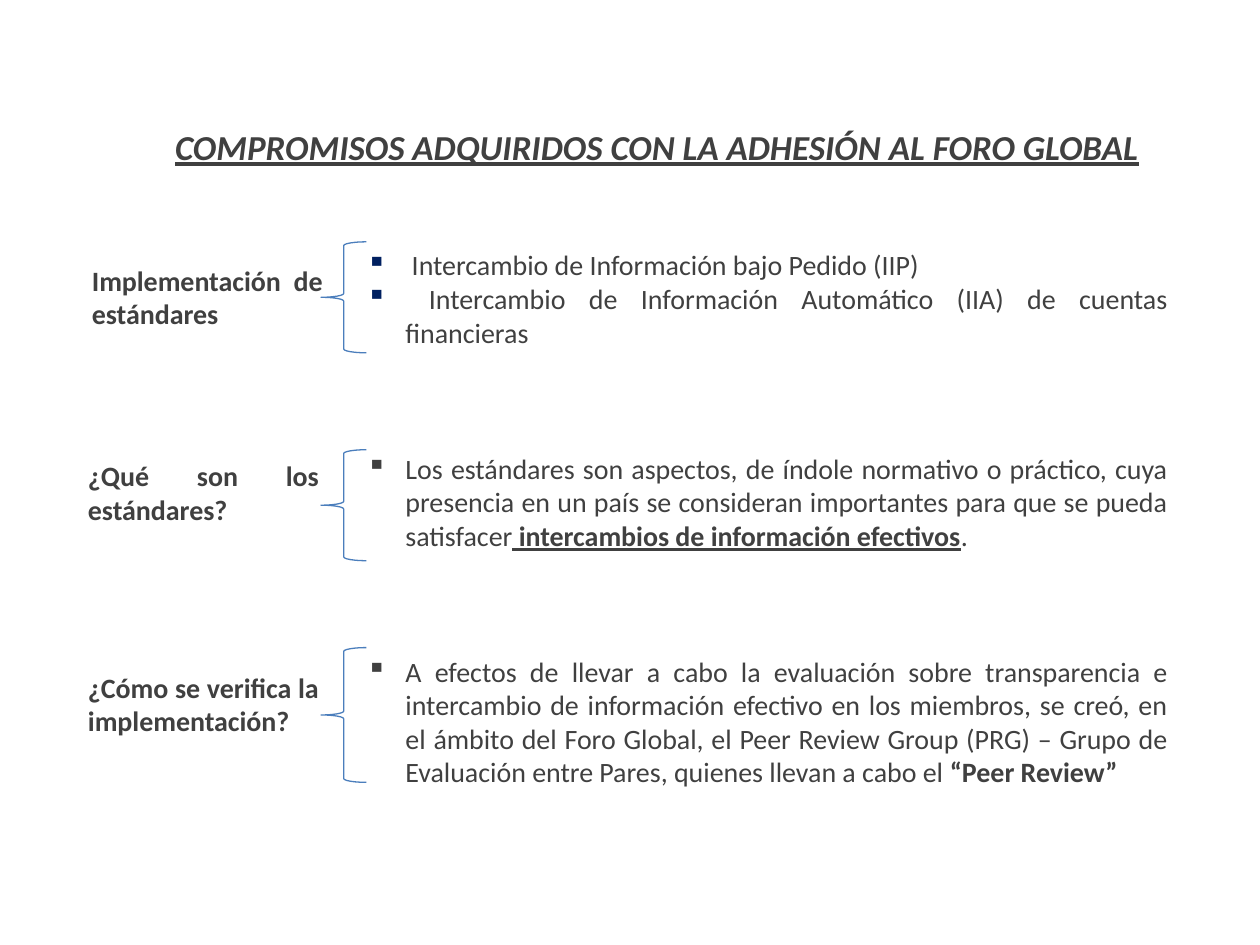
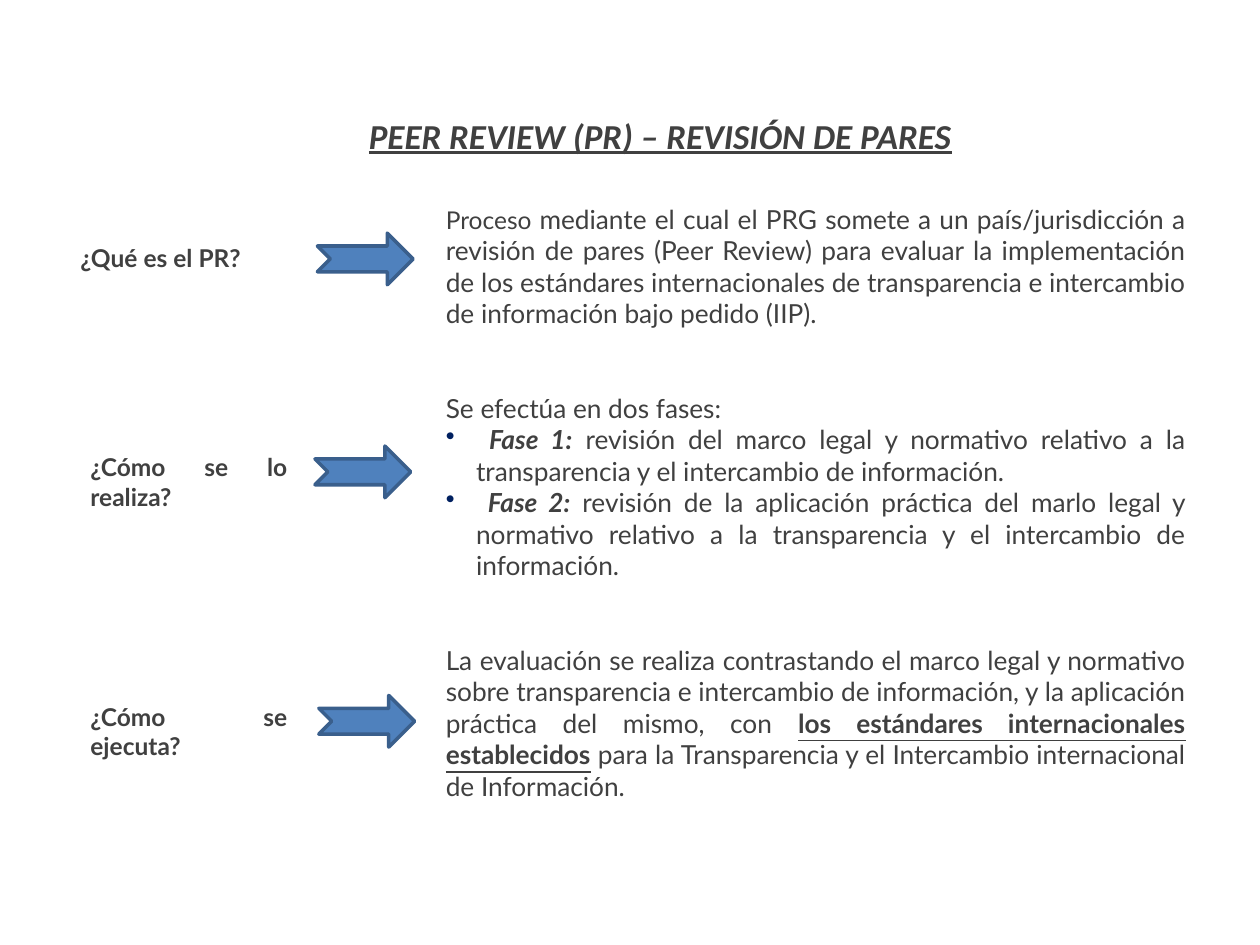
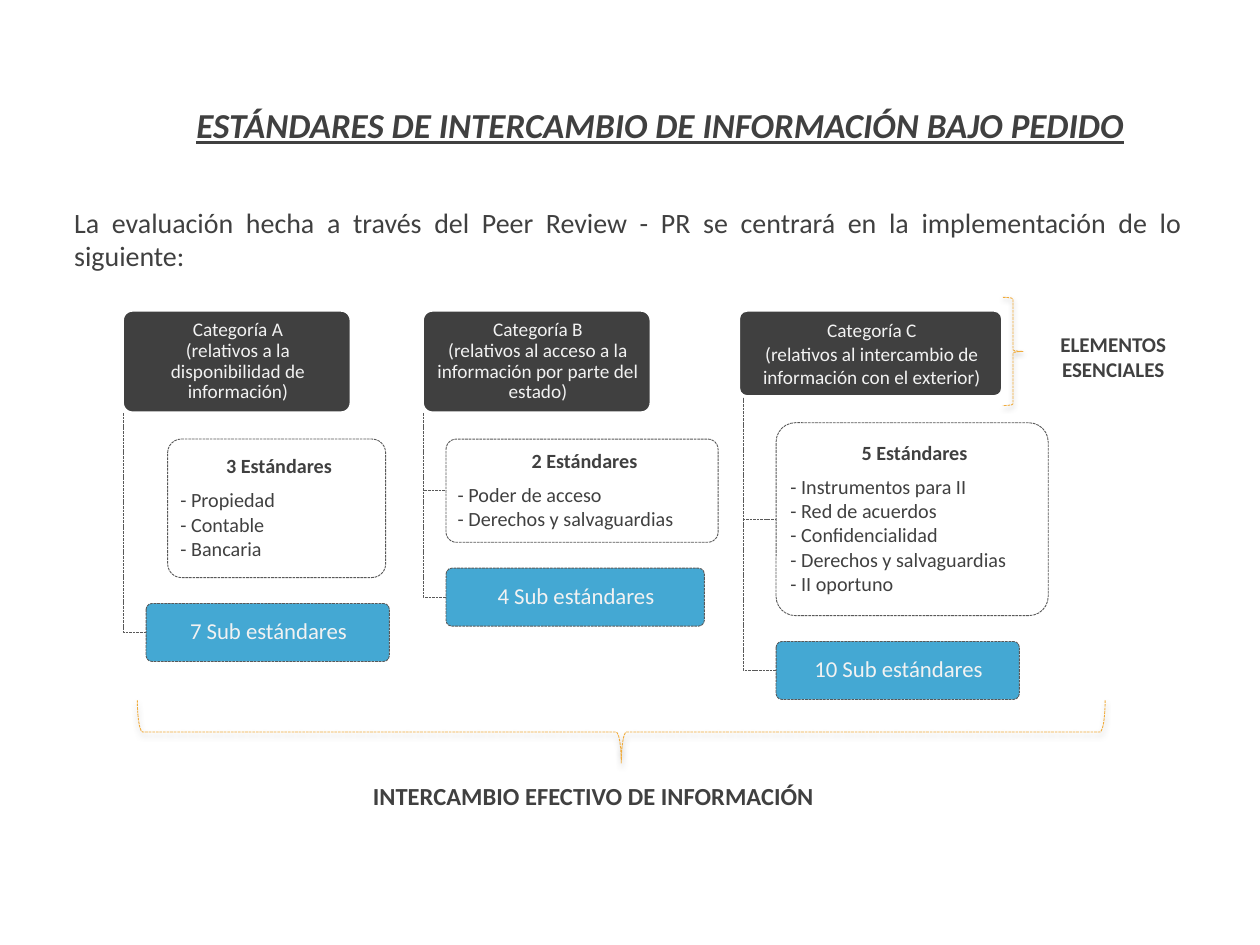
from lxml import etree
from pptx import Presentation
from pptx.dml.color import RGBColor
from pptx.enum import dml, shapes, text
from pptx.oxml import ns
from pptx.util import Pt

DARK = RGBColor(0x40, 0x40, 0x40)
NAVY = RGBColor(0x00, 0x20, 0x60)
BRACE_BLUE = RGBColor(0x4B, 0x7E, 0xBC)
ARROW_BLUE = RGBColor(0x4F, 0x81, 0xBD)
ARROW_EDGE = RGBColor(0x3A, 0x5F, 0x8C)
SKY = RGBColor(0x30, 0x9F, 0xCF)
ORANGE = RGBColor(0xF0, 0xAB, 0x3B)
GREY = RGBColor(0x59, 0x59, 0x59)
PALE = RGBColor(0xF2, 0xF2, 0xF2)
WHITE = RGBColor(0xFF, 0xFF, 0xFF)

LEFT, CENTER, JUSTIFY = text.PP_ALIGN.LEFT, text.PP_ALIGN.CENTER, text.PP_ALIGN.JUSTIFY
TOP, MIDDLE = text.MSO_ANCHOR.TOP, text.MSO_ANCHOR.MIDDLE
SHAPE = shapes.MSO_SHAPE
BOLD = {"bold": True}
KEY = {"bold": True, "underline": True}
PHASE = {"bold": True, "italic": True}
TITLE = {"size": Pt(20), "bold": True, "italic": True, "underline": True}


def write(sp, paras, fmt, insets=(7.2, 3.6, 7.2, 3.6), anchor=TOP):
    """Fill a shape with paragraphs given as (runs, paragraph format); a run is (text, font format)."""
    tf = sp.text_frame
    tf.word_wrap, tf.auto_size, tf.vertical_anchor = True, text.MSO_AUTO_SIZE.NONE, anchor
    for side, inset in zip(("left", "top", "right", "bottom"), insets):
        setattr(tf, f"margin_{side}", Pt(inset))
    for i, (runs, layout) in enumerate(paras):
        p = tf.paragraphs[0] if i == 0 else tf.add_paragraph()
        pPr = p._p.get_or_add_pPr()
        for name, value in layout.items():
            if name == "bullet":
                char, color, hang = value
                pPr.set("marL", str(Pt(hang)))
                pPr.set("indent", str(-Pt(hang)))
                clr = etree.SubElement(pPr, ns.qn("a:buClr"))
                etree.SubElement(clr, ns.qn("a:srgbClr"), val=str(color))
                etree.SubElement(pPr, ns.qn("a:buChar"), char=char)
            elif name == "indent":
                pPr.set("marL", "0")
                pPr.set("indent", str(Pt(value)))
            else:
                setattr(p, name, value)
        for words, own in runs:
            r = p.add_run()
            r.text = words
            for name, value in {"name": "Calibri", "color": DARK, **fmt, **own}.items():
                if name == "color":
                    r.font.color.rgb = value
                else:
                    setattr(r.font, name, value)


def style(sp, line, width, fill=None, dashed=False, opacity=100):
    sp.shadow.inherit = False
    sp.line.color.rgb, sp.line.width = line, Pt(width)
    if dashed:
        sp.line.dash_style = dml.MSO_LINE.SQUARE_DOT
    if fill is None:
        sp.fill.background()
        return
    sp.fill.solid()
    sp.fill.fore_color.rgb = fill
    if opacity < 100:
        clr = sp._element.spPr.find(ns.qn("a:solidFill"))[0]
        etree.SubElement(clr, ns.qn("a:alpha"), val=str(opacity * 1000))


prs = Presentation()
prs.slide_width, prs.slide_height = Pt(720), Pt(540)

# Titles
slides = []
for title, top, layout in [
    ("COMPROMISOS ADQUIRIDOS CON LA ADHESIÓN AL FORO GLOBAL", 64, {"alignment": LEFT, "line_spacing": 1.5}),
    ("PEER REVIEW (PR) – REVISIÓN DE PARES", 57.6, {"alignment": CENTER, "line_spacing": 1.5}),
    ("ESTÁNDARES DE INTERCAMBIO DE INFORMACIÓN BAJO PEDIDO", 57.6, {"alignment": CENTER}),
]:
    s = prs.slides.add_slide(prs.slide_layouts[5])
    sp = s.shapes.title
    sp.left, sp.top, sp.width, sp.height = Pt(92.9), Pt(top), Pt(568.8), Pt(27.4)
    write(sp, [([(title, {})], layout)], TITLE, anchor=MIDDLE)
    slides.append(s)
commitments, review, standards = slides

# Slide 1: commitments
square = {"alignment": JUSTIFY, "bullet": ("▪", DARK, 22.3)}
navy_square = {"alignment": JUSTIFY, "bullet": ("▪", NAVY, 22.3)}
new_topic = {**square, "space_before": Pt(58.5)}
sp = commitments.shapes.add_textbox(Pt(202.3), Pt(138.2), Pt(472.3), Pt(324))
write(sp, [
    ([(" Intercambio de Información bajo Pedido (IIP)", {})], navy_square),
    ([(" Intercambio de Información Automático (IIA) de cuentas financieras", {})], navy_square),
    ([("Los estándares son aspectos, de índole normativo o práctico, cuya presencia en un país "
       "se consideran importantes para que se pueda satisfacer", {}),
      (" ", {"underline": True}),
      ("intercambios de información efectivos", KEY),
      (".", {})], new_topic),
    ([("A efectos de llevar a cabo la evaluación sobre transparencia e intercambio de información "
       "efectivo en los miembros, se creó, en el ámbito del Foro Global, el Peer Review Group (PRG) "
       "– Grupo de Evaluación entre Pares, quienes llevan a cabo el ", {}),
      ("“Peer Review”", BOLD)], new_topic),
], {"size": Pt(16)})

for label, left, top, brace_top, brace_height in [
    ("Implementación de estándares", 45.4, 146.9, 138.2, 63.4),
    ("¿Qué son los estándares?", 43.2, 258.5, 257, 63.4),
    ("¿Cómo se verifica la implementación?", 43.2, 379.4, 370.1, 77),
]:
    sp = commitments.shapes.add_textbox(Pt(left), Pt(top), Pt(146.2), Pt(41))
    write(sp, [([(label, BOLD)], {"alignment": JUSTIFY})], {"size": Pt(16)})
    sp = commitments.shapes.add_shape(SHAPE.LEFT_BRACE, Pt(183.4), Pt(brace_top), Pt(26), Pt(brace_height))
    style(sp, BRACE_BLUE, 0.75)

# Slide 2: peer review
plain = {"alignment": JUSTIFY}
new_answer = {**plain, "space_before": Pt(36)}
phase = {**plain, "bullet": ("•", NAVY, 17.3)}
sp = review.shapes.add_textbox(Pt(247.7), Pt(112.6), Pt(437), Pt(372))
write(sp, [
    ([("Proceso ", {"size": Pt(14)}),
      ("mediante el cual el PRG somete a un país/jurisdicción a revisión de pares (Peer Review) "
       "para evaluar la implementación de los estándares internacionales de transparencia e "
       "intercambio de información bajo pedido (IIP).", {})], plain),
    ([("Se efectúa en dos fases:", {})], new_answer),
    ([(" ", {}), ("Fase 1:", PHASE),
      (" revisión del marco legal y normativo relativo a la transparencia y el intercambio "
       "de información.", {})], phase),
    ([(" ", {}), ("Fase 2:", PHASE),
      (" revisión de la aplicación práctica del marlo legal y normativo relativo a la "
       "transparencia y el intercambio de información.", {})], phase),
    ([("La evaluación se realiza contrastando el marco legal y normativo sobre transparencia e "
       "intercambio de información, y la aplicación práctica del mismo, con ", {}),
      ("los estándares internacionales establecidos", KEY),
      (" para la Transparencia y el Intercambio internacional de Información.", {})], new_answer),
], {"size": Pt(15), "name": "Lato"})

for question, left, top, width, arrow_left, arrow_top in [
    ("¿Qué es el PR?", 38.9, 135.4, 119.5, 181.4, 133.2),
    ("¿Cómo se lo realiza?", 44.6, 254.9, 126.7, 180, 254.9),
    ("¿Cómo se ejecuta?", 44.6, 397.4, 126.7, 182.2, 397.4),
]:
    sp = review.shapes.add_textbox(Pt(left), Pt(top), Pt(width), Pt(42))
    write(sp, [([(question, BOLD)], plain)], {"size": Pt(14), "name": "Lato"})
    sp = review.shapes.add_shape(SHAPE.NOTCHED_RIGHT_ARROW, Pt(arrow_left), Pt(arrow_top), Pt(54.7), Pt(29.5))
    style(sp, ARROW_EDGE, 2, ARROW_BLUE)

# Slide 3: standards by category
for words, box, size, own, align in [
    ("La evaluación hecha a través del Peer Review - PR se centrará en la implementación de lo siguiente:",
     (35.3, 113.8, 647.3, 29.5), 16, {}, JUSTIFY),
    ("ELEMENTOS ESENCIALES", (589.7, 185.8, 92.9, 32.4), 12, BOLD, CENTER),
    ("INTERCAMBIO EFECTIVO DE INFORMACIÓN", (167.8, 442.8, 342.7, 25.9), 14, BOLD, CENTER),
]:
    sp = standards.shapes.add_textbox(*map(Pt, box))
    write(sp, [([(words, own)], {"alignment": align})], {"size": Pt(size)})

HEAD_TOP, GAP, SUB_HEIGHT = 177.1, 14.8, 33.1
categories = [
    {"name": "Categoría A", "about": "(relativos a la disponibilidad de información)",
     "head": (69.8, 131, 59), "shift": -25, "spacing": 0.9, "spine": 70.6,
     "box": (95.8, 124.6, 79.2), "sub": (83.5, 139), "joined": False,
     "count": "3 Estándares", "items": ["Propiedad", "Contable", "Bancaria"], "total": "7 Sub estándares"},
    {"name": "Categoría B", "about": "(relativos al acceso a la información por parte del estado)",
     "head": (241.2, 131, 59), "shift": -46, "spacing": 0.9, "spine": 241.9,
     "box": (254.9, 155.5, 59), "sub": (254.9, 147.6), "joined": True,
     "count": "2 Estándares", "items": ["Poder de acceso", "Derechos y salvaguardias"],
     "total": "4 Sub estándares"},
    {"name": "Categoría C", "about": "(relativos al intercambio de información con el exterior)",
     "head": (421.9, 151.2, 49.7), "shift": -15, "spacing": 1.0, "spine": 424.8,
     "box": (443.5, 155.5, 110.2), "sub": (443.5, 139), "joined": True,
     "count": "5 Estándares",
     "items": ["Instrumentos para II", "Red de acuerdos", "Confidencialidad",
               "Derechos y salvaguardias", "II oportuno"],
     "total": "10 Sub estándares"},
]
for c in categories:
    head_left, head_width, head_height = c["head"]
    box_left, box_width, box_height = c["box"]
    sub_left, sub_width = c["sub"]
    head_bottom = HEAD_TOP + head_height
    box_top = head_bottom + GAP
    sub_top = box_top + box_height + GAP

    ends = [(sub_left, sub_top + SUB_HEIGHT / 2)]
    if c["joined"]:
        ends.append((box_left, box_top + box_height / 2))
    for x, y in ends:
        fb = standards.shapes.build_freeform(Pt(c["spine"]), Pt(head_bottom))
        fb.add_line_segments([(Pt(c["spine"]), Pt(y)), (Pt(x), Pt(y))], close=False)
        style(fb.convert_to_shape(), GREY, 0.5, dashed=True)

    centered = {"alignment": CENTER, "line_spacing": c["spacing"]}
    heading = [([(c["name"], {})], {**centered, "indent": c["shift"]}), ([(c["about"], {})], centered)]
    count = ([(c["count"], BOLD)], {"alignment": CENTER, "line_spacing": 0.9, "space_after": Pt(5.6)})
    listing = [count] + [([(f"- {item}", {})], {"alignment": LEFT}) for item in c["items"]]
    total = [([(c["total"], {})], {"alignment": CENTER, "line_spacing": 0.9})]
    solid = {"line": WHITE, "width": 2, "fill": DARK}
    dashed = {"line": GREY, "width": 0.5, "dashed": True, "opacity": 90}
    for box, look, paras, fmt, insets in [
        ((head_left, HEAD_TOP, head_width, head_height), solid, heading,
         {"size": Pt(11), "color": PALE}, (4.3, 3.6, 2.9, 3.6)),
        ((box_left, box_top, box_width, box_height), {**dashed, "fill": WHITE}, listing,
         {"size": Pt(11.5)}, (5, 4.3, 2.2, 4.3)),
        ((sub_left, sub_top, sub_width, SUB_HEIGHT), {**dashed, "fill": SKY}, total,
         {"size": Pt(13), "color": PALE}, (2.9, 2.2, 2.2, 2.2)),
    ]:
        sp = standards.shapes.add_shape(SHAPE.ROUNDED_RECTANGLE, *map(Pt, box))
        sp.adjustments[0] = 0.1
        style(sp, **look)
        write(sp, paras, fmt, insets, MIDDLE)

for box, rotation in [((573.1, 169.9, 11.5, 61.9), 0), ((337, 141.8, 36, 553), 90)]:
    sp = standards.shapes.add_shape(SHAPE.RIGHT_BRACE, *map(Pt, box))
    sp.rotation = rotation
    style(sp, ORANGE, 0.5, dashed=True)
    effects = sp._element.spPr.find(ns.qn("a:effectLst"))
    shadow = etree.SubElement(effects, ns.qn("a:outerShdw"), blurRad=str(Pt(3.1)), dist=str(Pt(1.6)),
                              dir="5400000", rotWithShape="0")
    clr = etree.SubElement(shadow, ns.qn("a:srgbClr"), val="000000")
    etree.SubElement(clr, ns.qn("a:alpha"), val="38000")

prs.save("out.pptx")
